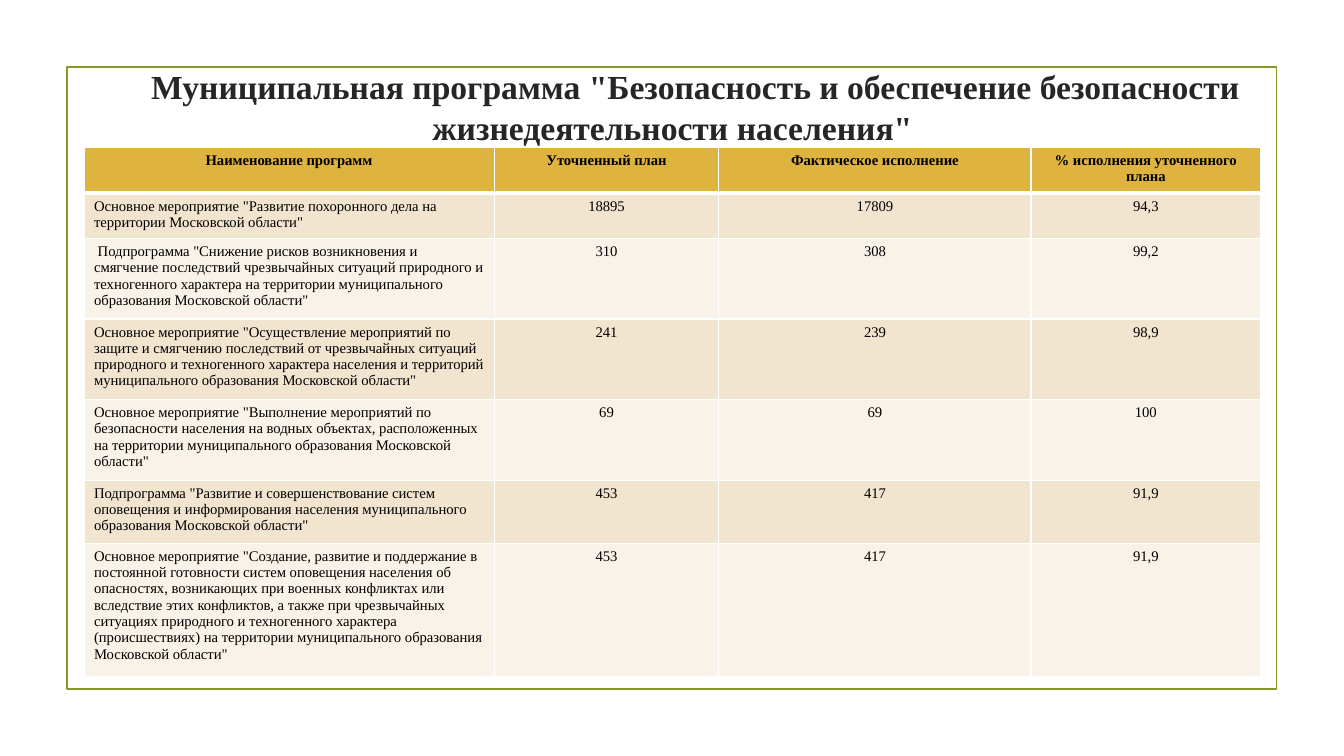
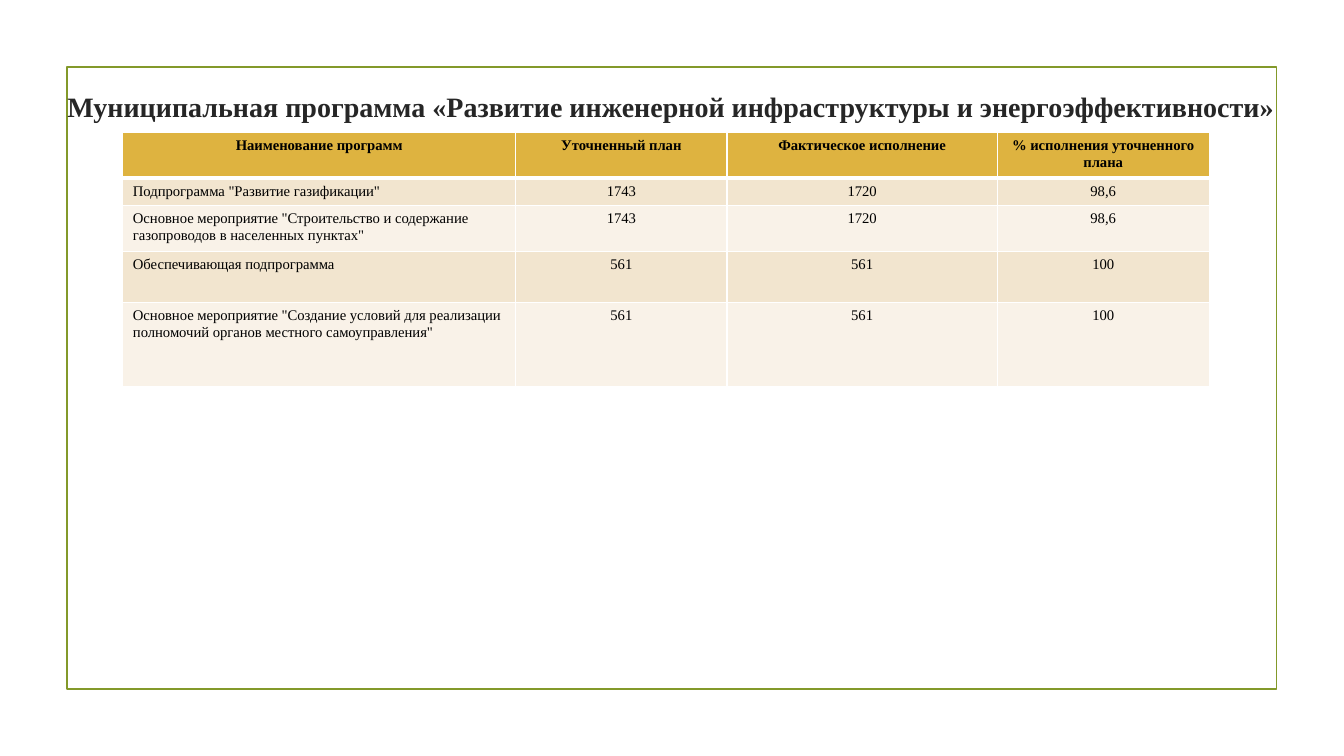
from lxml import etree
from pptx import Presentation
from pptx.dml.color import RGBColor
from pptx.enum.shapes import MSO_SHAPE
from pptx.enum.text import MSO_ANCHOR, MSO_AUTO_SIZE, PP_ALIGN
from pptx.oxml.ns import qn
from pptx.util import Pt

RECT = MSO_SHAPE.RECTANGLE
MIDDLE = MSO_ANCHOR.MIDDLE
GROW = MSO_AUTO_SIZE.SHAPE_TO_FIT_TEXT
LEFT, CENTER = PP_ALIGN.LEFT, PP_ALIGN.CENTER

WHITE = RGBColor(0xFF, 0xFF, 0xFF)
BLACK = RGBColor(0x00, 0x00, 0x00)
INK = RGBColor(0x26, 0x26, 0x26)
GREEN = RGBColor(0x83, 0x99, 0x2A)
GOLD = RGBColor(0xDE, 0xB3, 0x40)
BANDS = RGBColor(0xF2, 0xE5, 0xCF), RGBColor(0xF9, 0xF2, 0xE8)
FONT = "Times New Roman"

HEADER = ("Наименование программ", "Уточненный план",
          "Фактическое исполнение", "% исполнения уточненного плана")

SLIDES = [
    {
        "title": 'Муниципальная программа "Безопасность и обеспечение безопасности жизнедеятельности населения"',
        "title_size": 24,
        "title_box": (48.6, 46.4, 862.5, 59),
        "table_at": (60, 105.4),
        "cols": (293, 160.5, 223, 164),
        "rows": (31.8, 32, 57.6, 57.6, 57.6, 45, 95),
        "data": [
            ('Основное мероприятие "Развитие похоронного дела на территории Московской области"',
             "18895", "17809", "94,3"),
            (' Подпрограмма "Снижение рисков возникновения и смягчение последствий чрезвычайных ситуаций '
             'природного и техногенного характера на территории муниципального образования Московской области"',
             "310", "308", "99,2"),
            ('Основное мероприятие "Осуществление мероприятий по защите и смягчению последствий от '
             'чрезвычайных ситуаций природного и техногенного характера населения и территорий '
             'муниципального образования Московской области"',
             "241", "239", "98,9"),
            ('Основное мероприятие "Выполнение мероприятий по безопасности населения на водных объектах, '
             'расположенных на территории муниципального образования Московской области"',
             "69", "69", "100"),
            ('Подпрограмма "Развитие и совершенствование систем оповещения и информирования населения '
             'муниципального образования Московской области"',
             "453", "417", "91,9"),
            ('Основное мероприятие "Создание, развитие и поддержание в постоянной готовности систем '
             'оповещения населения об опасностях, возникающих при военных конфликтах или вследствие этих '
             'конфликтов, а также при чрезвычайных ситуациях природного и техногенного характера '
             '(происшествиях) на территории муниципального образования Московской области"',
             "453", "417", "91,9"),
        ],
    },
    {
        "title": "Муниципальная программа «Развитие инженерной инфраструктуры и энергоэффективности»",
        "title_size": 20,
        "title_box": (11.8, 63.5, 901.5, 24.5),
        "table_at": (87.8, 94.8),
        "cols": (280.6, 151, 193, 151.4),
        "rows": (32, 19.8, 32, 36.8, 60),
        "data": [
            ('Подпрограмма "Развитие газификации"', "1743", "1720", "98,6"),
            ('Основное мероприятие "Строительство и содержание газопроводов в населенных пунктах"',
             "1743", "1720", "98,6"),
            ("Обеспечивающая подпрограмма", "561", "561", "100"),
            ('Основное мероприятие "Создание условий для реализации полномочий органов местного самоуправления"',
             "561", "561", "100"),
        ],
    },
]


def put_text(tf, text, size=10.5, bold=False, color=BLACK, align=CENTER):
    p = tf.paragraphs[0]
    p.alignment = align
    r = p.add_run()
    r.text = text
    r.font.name = FONT
    r.font.size = Pt(size)
    r.font.bold = bold
    r.font.color.rgb = color
    return p


def set_borders(cell, **widths):
    tcPr = cell._tc.get_or_add_tcPr()
    for side in "LRTB":
        ln = etree.SubElement(tcPr, qn(f"a:ln{side}"), w=str(Pt(widths.get(side, 1))))
        fill = etree.SubElement(ln, qn("a:solidFill"))
        etree.SubElement(fill, qn("a:srgbClr"), val=str(WHITE))


prs = Presentation()
prs.slide_width, prs.slide_height = Pt(960), Pt(540)
layout = prs.slide_layouts[5]
for sp in list(layout.placeholders)[1:]:
    layout.shapes.element.remove(sp.element)
slides = [prs.slides.add_slide(layout) for _ in SLIDES]

frame = slides[0].shapes.add_shape(RECT, Pt(47.8), Pt(48), Pt(864), Pt(444))
frame.shadow.inherit = False
frame.fill.background()
frame.line.color.rgb = GREEN
frame.line.width = Pt(1.25)
layout.shapes.element.append(frame.element)

for slide, content in zip(slides, SLIDES):
    title = slide.shapes.title
    title.left, title.top, title.width, title.height = map(Pt, content["title_box"])
    tf = title.text_frame
    tf.margin_left = tf.margin_top = tf.margin_right = tf.margin_bottom = 0
    tf.vertical_anchor = MIDDLE
    tf.word_wrap = True
    tf.auto_size = GROW
    p = put_text(tf, content["title"], size=content["title_size"], bold=True, color=INK)
    p.line_spacing = 1.02
    pPr = p._p.get_or_add_pPr()
    pPr.set("marL", str(Pt(1)))
    pPr.set("indent", str(Pt(32.5)))

    cols, rows = content["cols"], content["rows"]
    left, top = content["table_at"]
    table = slide.shapes.add_table(len(rows), len(cols), Pt(left), Pt(top),
                                   Pt(sum(cols)), Pt(sum(rows))).table
    for col, width in zip(table.columns, cols):
        col.width = Pt(width)
    for row, height in zip(table.rows, rows):
        row.height = Pt(height)

    for i, values in enumerate([HEADER] + content["data"]):
        for j, value in enumerate(values):
            cell = table.cell(i, j)
            set_borders(cell, T=3 if i == 1 else 1, B=3 if i == 0 else 1)
            cell.fill.solid()
            cell.fill.fore_color.rgb = BANDS[(i - 1) % 2] if i else GOLD
            put_text(cell.text_frame, value, bold=i == 0,
                     align=LEFT if i and j == 0 else CENTER)

prs.save("out.pptx")
